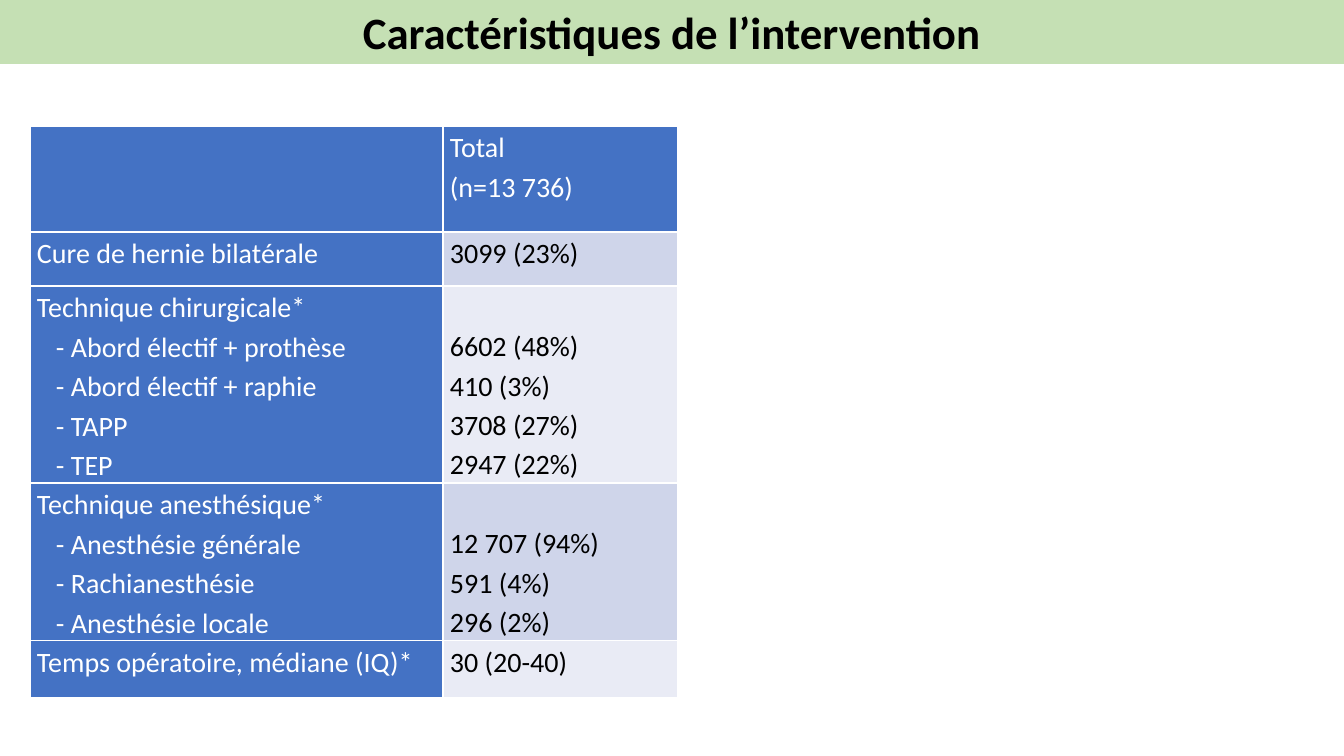
from lxml import etree
from pptx import Presentation
from pptx.dml.color import RGBColor
from pptx.enum.text import MSO_ANCHOR, PP_ALIGN
from pptx.oxml.ns import qn
from pptx.util import Pt

TITLE = "Caractéristiques de l’intervention"
HEADER = ["Total", "(n=13 736)"]
GROUPS = [
    ("Cure de hernie bilatérale", [], ["3099 (23%)"], 54),
    ("Technique chirurgicale*",
     ["- Abord électif + prothèse", "- Abord électif + raphie", "- TAPP", "- TEP"],
     ["6602 (48%)", "410 (3%)", "3708 (27%)", "2947 (22%)"], 193),
    ("Technique anesthésique*",
     ["- Anesthésie générale", "- Rachianesthésie", "- Anesthésie locale"],
     ["12 707 (94%)", "591 (4%)", "296 (2%)"], 155),
    ("Temps opératoire, médiane (IQ)*", [], ["30 (20-40)"], 57),
]
SLIDE_SIZE = (1344, 756)
TITLE_HEIGHT = 64
TABLE_LEFT, TABLE_TOP = 30, 126
COLUMN_WIDTHS = [413, 235]
HEADER_HEIGHT = 106
CELL_MARGIN, ITEM_INDENT, LINE_HEIGHT = 7, 19, 39
FONT = "Calibri"
GREEN, BLUE, WHITE, BLACK = "C5E0B4", "4472C4", "FFFFFF", "000000"
BANDS = ["CFD5EA", "E9EBF5"]


def px(length):
    return round(length * 914400 / 100.8)


def color(value):
    return RGBColor.from_string(value)


def paint(target, value):
    target.fill.solid()
    target.fill.fore_color.rgb = color(value)


def style(run, size, value, bold=False):
    run.font.name = FONT
    run.font.size = Pt(size)
    run.font.bold = bold
    run.font.color.rgb = color(value)


def add_borders(cell):
    properties = cell._tc.get_or_add_tcPr()
    for index, side in enumerate(["a:lnL", "a:lnR", "a:lnT", "a:lnB"]):
        line = etree.Element(qn(side), w=str(Pt(1)))
        fill = etree.SubElement(line, qn("a:solidFill"))
        etree.SubElement(fill, qn("a:srgbClr"), val=WHITE)
        properties.insert(index, line)


def fill_cell(cell, lines, background, text_color, indented=False, top=0):
    paint(cell, background)
    add_borders(cell)
    cell.margin_left = cell.margin_right = px(CELL_MARGIN)
    cell.margin_top, cell.margin_bottom = px(top), 0
    cell.text_frame.text = "\n".join(lines)
    for index, paragraph in enumerate(cell.text_frame.paragraphs):
        paragraph.line_spacing = 1.15
        if indented and index:
            paragraph._p.get_or_add_pPr().set("marL", str(px(ITEM_INDENT)))
        for run in paragraph.runs:
            style(run, 20, text_color)


def add_title(slide):
    title = slide.shapes.title
    title.left, title.top = 0, 0
    title.width, title.height = px(SLIDE_SIZE[0]), px(TITLE_HEIGHT)
    paint(title, GREEN)
    frame = title.text_frame
    frame.text = TITLE
    frame.vertical_anchor = MSO_ANCHOR.MIDDLE
    paragraph = frame.paragraphs[0]
    paragraph.alignment = PP_ALIGN.CENTER
    paragraph.line_spacing = 1.0
    style(paragraph.runs[0], 32, BLACK, bold=True)


def add_results(slide):
    heights = [HEADER_HEIGHT] + [group[3] for group in GROUPS]
    table = slide.shapes.add_table(
        len(heights), len(COLUMN_WIDTHS), px(TABLE_LEFT), px(TABLE_TOP),
        px(sum(COLUMN_WIDTHS)), px(sum(heights))).table
    table.first_row = table.horz_banding = False
    for column, width in zip(table.columns, COLUMN_WIDTHS):
        column.width = px(width)
    for row, height in zip(table.rows, heights):
        row.height = px(height)
    fill_cell(table.cell(0, 0), [], BLUE, WHITE)
    fill_cell(table.cell(0, 1), HEADER, BLUE, WHITE)
    for index, (label, items, values, _) in enumerate(GROUPS):
        row = index + 1
        fill_cell(table.cell(row, 0), [label] + items, BLUE, WHITE, indented=True)
        fill_cell(table.cell(row, 1), values, BANDS[index % 2], BLACK,
                  top=LINE_HEIGHT if items else 0)


def main():
    """Build the slide on the characteristics of the operation."""
    presentation = Presentation()
    presentation.slide_width, presentation.slide_height = map(px, SLIDE_SIZE)
    slide = presentation.slides.add_slide(presentation.slide_layouts[5])
    add_title(slide)
    add_results(slide)
    presentation.save("out.pptx")


if __name__ == "__main__":
    main()
